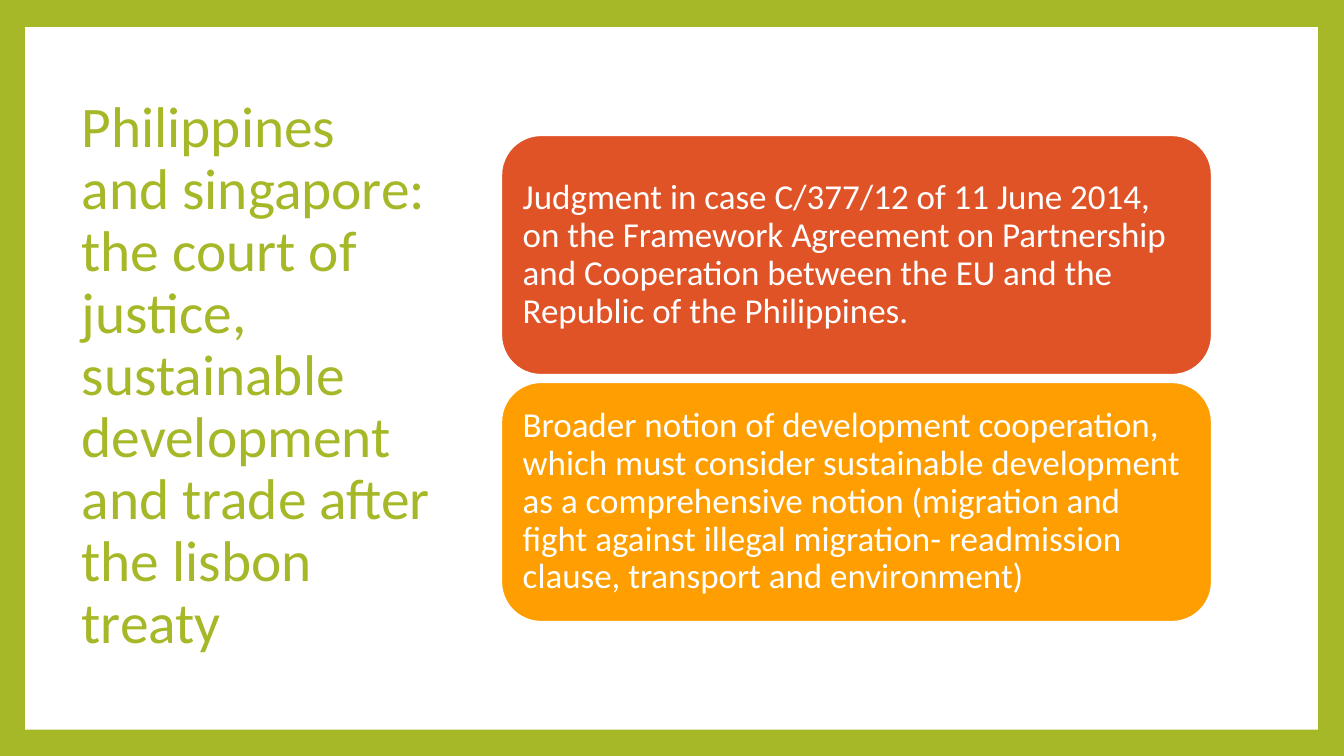
from dataclasses import dataclass

from pptx import Presentation
from pptx.dml.color import RGBColor
from pptx.enum.shapes import MSO_SHAPE
from pptx.enum.text import MSO_ANCHOR, PP_ALIGN
from pptx.util import Inches, Pt


@dataclass(frozen=True)
class Theme:
    """Hold the colours, font and type sizes."""
    green: str = "A6B727"
    white: str = "FFFFFF"
    red: str = "DF5327"
    orange: str = "FE9E00"
    font: str = "Calibri"
    title_size: float = 41
    card_size: float = 25
    outline: float = 1.5


class SlideBuilder:
    """Draw styled elements on the current slide."""

    def __init__(self, prs, theme):
        """Add a title-only slide."""
        self.prs, self.theme = prs, theme
        self.slide = prs.slides.add_slide(prs.slide_layouts[5])

    def box(self, x, y, w, h):
        """Turn shares of the slide's size into lengths."""
        W, H = self.prs.slide_width, self.prs.slide_height
        return [round(v) for v in (x * W, y * H, w * W, h * H)]

    def background(self, color):
        """Fill the slide background."""
        fill = self.slide.background.fill
        fill.solid()
        fill.fore_color.rgb = RGBColor.from_string(color)

    def put_text(self, s, text, size, color, space_after=0):
        """Put one formatted paragraph in a shape."""
        tf = s.text_frame
        inset = Inches(0.1)
        frame_format = {
            "word_wrap": True, "vertical_anchor": MSO_ANCHOR.MIDDLE,
            "margin_left": inset, "margin_right": inset,
            "margin_top": inset, "margin_bottom": inset,
        }
        for name, value in frame_format.items():
            setattr(tf, name, value)
        p = tf.paragraphs[0]
        paragraph_format = {
            "alignment": PP_ALIGN.LEFT, "line_spacing": 0.9,
            "space_before": Pt(0), "space_after": Pt(space_after),
        }
        for name, value in paragraph_format.items():
            setattr(p, name, value)
        r = p.add_run()
        r.text = text
        for name, value in {"name": self.theme.font, "size": Pt(size)}.items():
            setattr(r.font, name, value)
        r.font.color.rgb = RGBColor.from_string(color)

    def title(self, text, *share):
        """Move and fill the title placeholder."""
        s = self.slide.shapes.title
        s.left, s.top, s.width, s.height = self.box(*share)
        self.put_text(s, text, self.theme.title_size, self.theme.green)

    def shape(self, kind, fill, *share):
        """Add a filled shape without outline or shadow."""
        s = self.slide.shapes.add_shape(kind, *self.box(*share))
        s.shadow.inherit = False
        s.fill.solid()
        s.fill.fore_color.rgb = RGBColor.from_string(fill)
        s.line.fill.background()
        return s

    def panel(self, *share):
        """Add the white panel behind everything else."""
        s = self.shape(MSO_SHAPE.RECTANGLE, self.theme.white, *share)
        self.slide.shapes._spTree.insert(2, s._element)

    def card(self, text, fill, *share):
        """Add a rounded card with its text."""
        s = self.shape(MSO_SHAPE.ROUNDED_RECTANGLE, fill, *share)
        s.line.color.rgb = RGBColor.from_string(self.theme.white)
        s.line.width = Pt(self.theme.outline)
        size = self.theme.card_size
        self.put_text(s, text, size, self.theme.white, 0.35 * size)


def main():
    """Build and save the slide."""
    prs = Presentation()
    prs.slide_width, prs.slide_height = Inches(13.33), Inches(7.5)
    theme = Theme()
    s = SlideBuilder(prs, theme)
    s.background(theme.green)
    s.panel(0.25 / 13.33, 0.27 / 7.5, 12.82 / 13.33, 6.97 / 7.5)
    s.title(
        "Philippines and singapore: the court of justice, sustainable "
        "development and trade after the lisbon treaty",
        0.71 / 13.33, 0.67 / 7.5, 3.68 / 13.33, 6.13 / 7.5)
    cards = [
        ("Judgment in case C/377/12 of 11 June 2014, on the Framework "
         "Agreement on Partnership and Cooperation between the EU and the "
         "Republic of the Philippines.", theme.red),
        ("Broader notion of development cooperation, which must consider "
         "sustainable development as a comprehensive notion (migration and "
         "fight against illegal migration- readmission clause, transport "
         "and environment)", theme.orange),
    ]
    top, pitch = 1.34 / 7.5, 2.45 / 7.5
    for row, (text, fill) in enumerate(cards):
        s.card(text, fill, 4.97 / 13.33, top + row * pitch,
               7.05 / 13.33, 2.38 / 7.5)
    prs.save("out.pptx")


if __name__ == "__main__":
    main()
